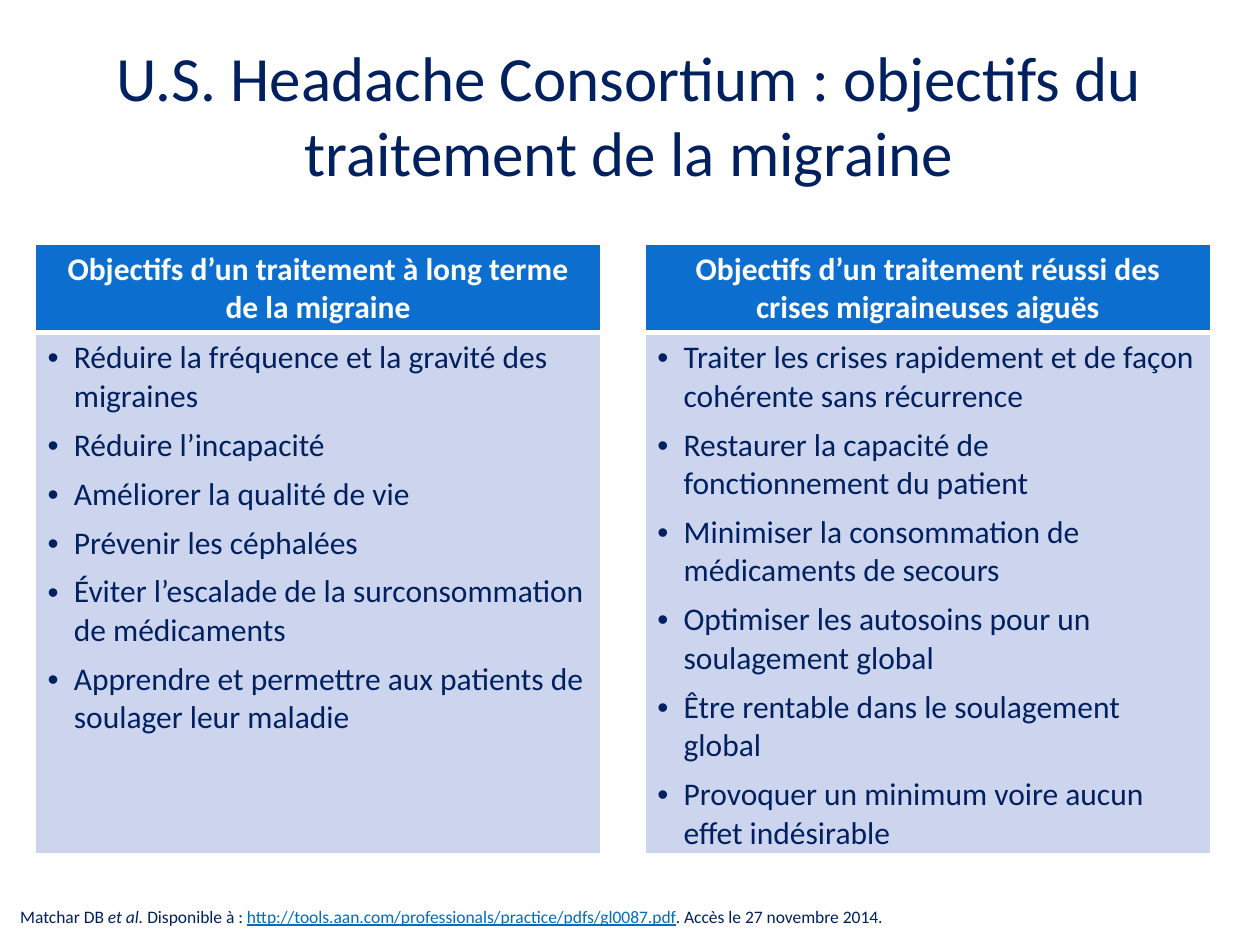
from lxml import etree
from pptx import Presentation
from pptx.dml.color import RGBColor
from pptx.enum import text
from pptx.oxml import ns
from pptx.util import Pt

NAVY, BLUE, PALE, WHITE, LINK = "002060", "0C6FCF", "CCD5ED", "FFFFFF", "006DBF"
FONT = "Calibri"

TITLE = "U.S. Headache Consortium : objectifs du traitement de la migraine"
GOALS = [
    ("Objectifs d’un traitement à long terme de la migraine", [
        "Réduire la fréquence et la gravité des migraines",
        "Réduire l’incapacité",
        "Améliorer la qualité de vie",
        "Prévenir les céphalées",
        "Éviter l’escalade de la surconsommation de médicaments",
        "Apprendre et permettre aux patients de soulager leur maladie",
    ]),
    ("Objectifs d’un traitement réussi des crises migraineuses aiguës", [
        "Traiter les crises rapidement et de façon cohérente sans récurrence",
        "Restaurer la capacité de fonctionnement du patient",
        "Minimiser la consommation de médicaments de secours",
        "Optimiser les autosoins pour un soulagement global",
        "Être rentable dans le soulagement global",
        "Provoquer un minimum voire aucun effet indésirable",
    ]),
]
SOURCE = [
    ("Matchar DB ", "plain"),
    ("et al. ", "italic"),
    ("Disponible à : ", "plain"),
    ("http://tools.aan.com/professionals/practice/pdfs/gl0087.pdf", "link"),
    (". Accès le 27 novembre 2014.", "plain"),
]
COLUMN_WIDTHS = [323.5, 25, 323.5]
ROW_HEIGHTS = [50, 298]


def color(hex_string):
    return RGBColor.from_string(hex_string)


def set_font(font, size, hex_string, bold=False):
    font.name, font.size, font.bold = FONT, Pt(size), bold
    font.color.rgb = color(hex_string)


def set_borders(cell, bottom):
    """Draw white cell borders, with the bottom one of the given width."""
    properties = cell._tc.get_or_add_tcPr()
    for side, width in (("L", 1), ("R", 1), ("T", 1), ("B", bottom)):
        line = etree.SubElement(properties, ns.qn(f"a:ln{side}"), w=str(Pt(width)))
        fill = etree.SubElement(line, ns.qn("a:solidFill"))
        etree.SubElement(fill, ns.qn("a:srgbClr"), val=WHITE)


def add_bullet(paragraph):
    properties = paragraph._p.get_or_add_pPr()
    properties.set("marL", str(Pt(15)))
    properties.set("indent", str(Pt(-15)))
    etree.SubElement(properties, ns.qn("a:buFont"), typeface="Arial")
    etree.SubElement(properties, ns.qn("a:buChar"), char="•")


def fill_cell(cell, hex_string):
    cell.fill.solid()
    cell.fill.fore_color.rgb = color(hex_string)


def add_title(slide):
    title = slide.shapes.title
    title.left, title.top, title.width, title.height = Pt(35.5), Pt(20), Pt(648), Pt(90)
    title.text_frame.text = TITLE
    title.text_frame.vertical_anchor = text.MSO_ANCHOR.MIDDLE
    paragraph = title.text_frame.paragraphs[0]
    paragraph.alignment = text.PP_ALIGN.CENTER
    set_font(paragraph.font, 36, NAVY)


def add_goals(slide):
    table = slide.shapes.add_table(
        2, 3, Pt(20), Pt(139.5), Pt(sum(COLUMN_WIDTHS)), Pt(sum(ROW_HEIGHTS))).table
    table.horz_banding = False
    for column, width in zip(table.columns, COLUMN_WIDTHS):
        column.width = Pt(width)
    for row, height, bottom in zip(table.rows, ROW_HEIGHTS, (3, 1)):
        row.height = Pt(height)
        for cell in row.cells:
            set_borders(cell, bottom)
            cell.fill.background()

    for column, (heading, goals) in zip((0, 2), GOALS):
        header, body = table.cell(0, column), table.cell(1, column)
        fill_cell(header, BLUE)
        header.text = heading
        header.vertical_anchor = text.MSO_ANCHOR.MIDDLE
        paragraph = header.text_frame.paragraphs[0]
        paragraph.alignment = text.PP_ALIGN.CENTER
        set_font(paragraph.font, 18, WHITE, bold=True)

        fill_cell(body, PALE)
        body.text = "\n".join(goals)
        for paragraph in body.text_frame.paragraphs:
            add_bullet(paragraph)
            paragraph.space_after = Pt(6)
            set_font(paragraph.font, 18, NAVY)


def add_source(slide):
    box = slide.shapes.add_textbox(Pt(4.5), Pt(514), Pt(705.5), Pt(19.5))
    box.text_frame.word_wrap = True
    paragraph = box.text_frame.paragraphs[0]
    for words, style in SOURCE:
        run = paragraph.add_run()
        run.text = words
        set_font(run.font, 10, LINK if style == "link" else NAVY)
        run.font.italic = style == "italic"
        run.font.underline = style == "link"


def main():
    presentation = Presentation()
    presentation.slide_width, presentation.slide_height = Pt(720), Pt(540)
    slide = presentation.slides.add_slide(presentation.slide_layouts[5])
    add_source(slide)
    add_title(slide)
    add_goals(slide)
    presentation.save("out.pptx")


if __name__ == "__main__":
    main()
